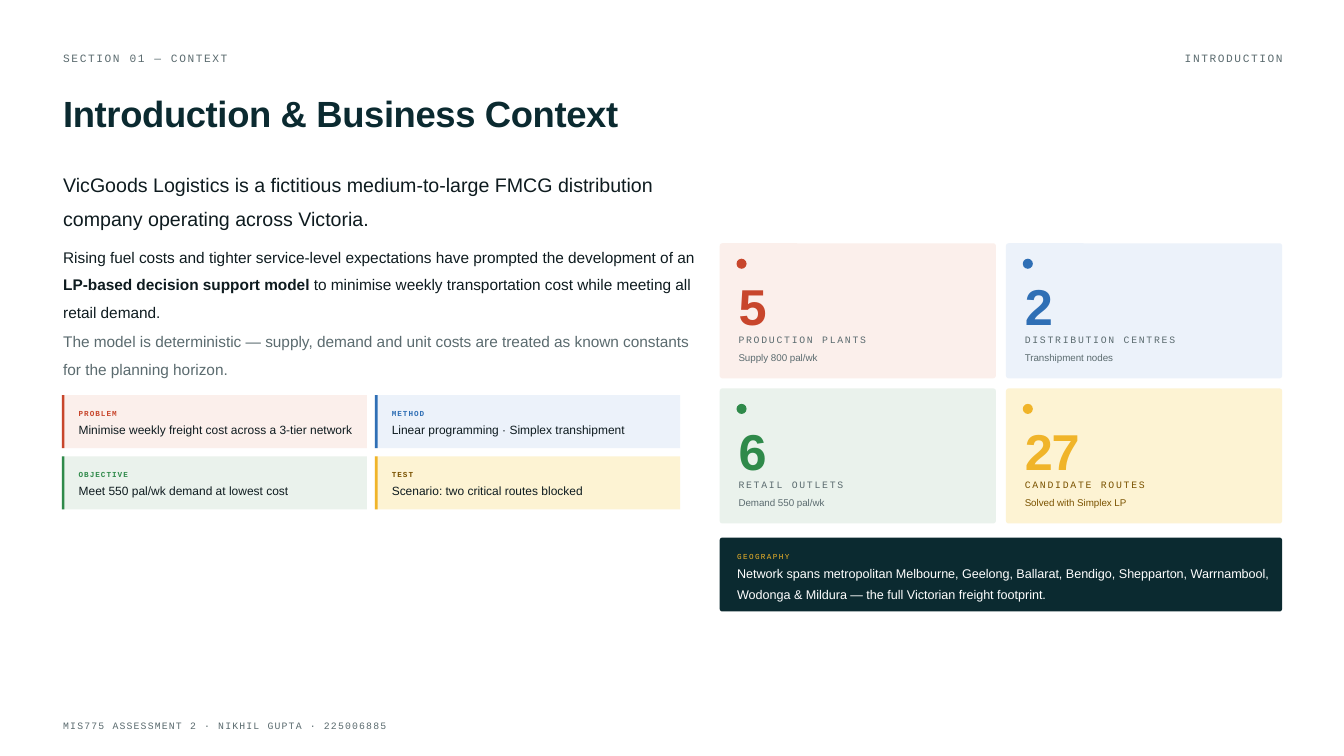
"""Build the introduction and business context slide."""
from dataclasses import dataclass
from typing import NamedTuple

from lxml import etree
from pptx import Presentation
from pptx import util as u
from pptx.dml.color import RGBColor
from pptx.enum import shapes, text
from pptx.oxml.ns import qn

SANS, MONO = "Arial", "Courier New"
WHITE = RGBColor(0xFF, 0xFF, 0xFF)
INK = RGBColor(0x0E, 0x1B, 0x1F)
NAVY = RGBColor(0x0B, 0x2A, 0x30)
GREY = RGBColor(0x5B, 0x6B, 0x6F)
RED = RGBColor(0xC8, 0x46, 0x2C)
BLUE = RGBColor(0x2F, 0x6F, 0xB5)
GREEN = RGBColor(0x2F, 0x8A, 0x4A)
AMBER = RGBColor(0xF0, 0xB4, 0x29)
BROWN = RGBColor(0x7A, 0x52, 0x00)
RED_TINT = RGBColor(0xFB, 0xEF, 0xEB)
BLUE_TINT = RGBColor(0xEC, 0xF2, 0xFA)
GREEN_TINT = RGBColor(0xEA, 0xF2, 0xEC)
AMBER_TINT = RGBColor(0xFD, 0xF3, 0xD3)

MARGIN = 0.94
RADIUS = 0.04


class Box(NamedTuple):
    """A rectangle in inches."""
    left: float
    top: float
    width: float
    height: float


@dataclass(frozen=True)
class Grid:
    """Equal cells separated by one gap."""
    left: float
    top: float
    width: float
    height: float
    gap: float

    def cell(self, index: int, columns: int = 2) -> Box:
        """Return the cell at a running index."""
        row, column = divmod(index, columns)
        return Box(self.left + column * (self.width + self.gap),
                   self.top + row * (self.height + self.gap), self.width, self.height)


@dataclass(frozen=True)
class Note:
    """A short labelled statement with a coloured edge."""
    label: str
    statement: str
    accent: RGBColor
    tint: RGBColor
    label_color: RGBColor


@dataclass(frozen=True)
class Card:
    """A key figure with its caption."""
    figure: str
    label: str
    detail: str
    accent: RGBColor
    tint: RGBColor
    label_color: RGBColor = GREY


NOTE_GRID = Grid(0.92, 5.88, 4.54, 0.79, 0.12)
CARD_GRID = Grid(10.71, 3.62, 4.11, 2.01, 0.15)

NOTES = (
    Note("PROBLEM", "Minimise weekly freight cost across a 3-tier network", RED, RED_TINT, RED),
    Note("METHOD", "Linear programming · Simplex transhipment", BLUE, BLUE_TINT, BLUE),
    Note("OBJECTIVE", "Meet 550 pal/wk demand at lowest cost", GREEN, GREEN_TINT, GREEN),
    Note("TEST", "Scenario: two critical routes blocked", AMBER, AMBER_TINT, BROWN),
)
CARDS = (
    Card("5", "PRODUCTION PLANTS", "Supply 800 pal/wk", RED, RED_TINT),
    Card("2", "DISTRIBUTION CENTRES", "Transhipment nodes", BLUE, BLUE_TINT),
    Card("6", "RETAIL OUTLETS", "Demand 550 pal/wk", GREEN, GREEN_TINT),
    Card("27", "CANDIDATE ROUTES", "Solved with Simplex LP", AMBER, AMBER_TINT, BROWN),
)


def write(paragraph, words: str, *, size: float, leading: float, color: RGBColor = INK,
          font: str = SANS, bold: bool = False, spacing: float = 0) -> None:
    """Append a formatted run to a paragraph."""
    paragraph.line_spacing = u.Pt(leading)
    paragraph.alignment = text.PP_ALIGN.LEFT
    run = paragraph.add_run()
    run.text = words
    run.font.name, run.font.size, run.font.bold = font, u.Pt(size), bold
    run.font.color.rgb = color
    if spacing:
        run.font._element.set("spc", str(round(spacing * 100)))


def prepare(shape, box: Box):
    """Place a text shape, clear its insets and return its text frame."""
    shape.left, shape.top, shape.width, shape.height = map(u.Inches, box)
    frame = shape.text_frame
    frame.margin_left = frame.margin_top = frame.margin_right = frame.margin_bottom = 0
    frame.vertical_anchor = text.MSO_ANCHOR.TOP
    frame.word_wrap = True
    frame.auto_size = text.MSO_AUTO_SIZE.NONE
    return frame


def add_text(slide, box: Box, words: str, **style) -> None:
    """Add a one-paragraph text box."""
    frame = prepare(slide.shapes.add_textbox(*map(u.Inches, box)), box)
    write(frame.paragraphs[0], words, **style)


def add_block(slide, kind: shapes.MSO_SHAPE, box: Box, color: RGBColor) -> None:
    """Add a filled preset shape without outline."""
    shape = slide.shapes.add_shape(kind, *map(u.Inches, box))
    shape.shadow.inherit = False
    shape.fill.solid()
    shape.fill.fore_color.rgb = color
    shape.line.fill.background()
    if kind == shapes.MSO_SHAPE.ROUNDED_RECTANGLE:
        shape.adjustments[0] = RADIUS / min(box.width, box.height)


def fill_body(placeholder) -> None:
    """Write the three introductory paragraphs."""
    frame = prepare(placeholder, Box(MARGIN, 2.41, 9.43, 3.2))
    lead, need, model = frame.paragraphs[0], frame.add_paragraph(), frame.add_paragraph()
    for paragraph, before in ((lead, 0), (need, 9), (model, 1.6)):
        properties = paragraph._p.get_or_add_pPr()
        properties.set("marL", "0")
        properties.set("indent", "0")
        etree.SubElement(properties, qn("a:buNone"))
        paragraph.space_before = u.Pt(before)
    write(lead, "VicGoods Logistics is a fictitious medium-to-large FMCG distribution "
          "company operating across Victoria.", size=21, leading=36.5)
    regular = dict(size=16.5, leading=29.7)
    write(need, "Rising fuel costs and tighter service-level expectations have prompted "
          "the development of an ", **regular)
    write(need, "LP-based decision support model ", bold=True, **regular)
    write(need, "to minimise weekly transportation cost while meeting all retail demand.", **regular)
    write(model, "The model is deterministic — supply, demand and unit costs are treated as "
          "known constants for the planning horizon.", color=GREY, **regular)


def draw_note(slide, note: Note, box: Box) -> None:
    """Draw one labelled statement."""
    add_block(slide, shapes.MSO_SHAPE.RECTANGLE, box, note.tint)
    add_block(slide, shapes.MSO_SHAPE.RECTANGLE, box._replace(width=0.04), note.accent)
    left, width = box.left + 0.25, 4.19
    add_text(slide, Box(left, box.top + 0.15, width, 0.2), note.label, size=8.2, leading=13.9,
             color=note.label_color, font=MONO, bold=True, spacing=1.1)
    add_text(slide, Box(left, box.top + 0.32, width, 0.32), note.statement, size=12.8, leading=21.4)


def draw_card(slide, card: Card, box: Box) -> None:
    """Draw one key figure card."""
    add_block(slide, shapes.MSO_SHAPE.ROUNDED_RECTANGLE, box, card.tint)
    add_block(slide, shapes.MSO_SHAPE.OVAL,
              Box(box.left + 0.25, box.top + 0.23, 0.15, 0.15), card.accent)
    left, width = box.left + 0.28, 3.67
    add_text(slide, Box(left, box.top + 0.47, width, 0.77), card.figure, size=54, leading=64.8,
             color=card.accent, bold=True, spacing=-1.1)
    caption = dict(size=10.5, leading=17.6, color=card.label_color)
    add_text(slide, Box(left, box.top + 1.27, width, 0.25), card.label,
             font=MONO, spacing=1.9, **caption)
    add_text(slide, Box(left, box.top + 1.54, width, 0.25), card.detail, **caption)


def draw_geography(slide) -> None:
    """Draw the dark geography panel."""
    panel = Box(CARD_GRID.left, 8, 2 * CARD_GRID.width + CARD_GRID.gap, 1.1)
    add_block(slide, shapes.MSO_SHAPE.ROUNDED_RECTANGLE, panel, NAVY)
    left, width = panel.left + 0.26, 8.1
    add_text(slide, Box(left, panel.top + 0.16, width, 0.2), "GEOGRAPHY", size=8.2,
             leading=13.9, color=AMBER, font=MONO, spacing=1.5)
    add_text(slide, Box(left, panel.top + 0.33, width, 0.59),
             "Network spans metropolitan Melbourne, Geelong, Ballarat, Bendigo, Shepparton, "
             "Warrnambool, Wodonga & Mildura — the full Victorian freight footprint.",
             size=13.5, leading=22.7, color=WHITE)


def main() -> None:
    """Build and save the presentation."""
    presentation = Presentation()
    presentation.slide_width, presentation.slide_height = u.Inches(20), u.Inches(11.25)
    slide = presentation.slides.add_slide(presentation.slide_layouts[1])
    title = prepare(slide.shapes.title, Box(MARGIN, 1.3, 18.66, 0.63))
    write(title.paragraphs[0], "Introduction & Business Context", size=39, leading=50.5,
          color=NAVY, bold=True, spacing=-0.4)
    fill_body(slide.placeholders[1])
    header = dict(size=12, leading=20.2, color=GREY, font=MONO, spacing=1.7)
    add_text(slide, Box(MARGIN, 0.69, 2.68, 0.3), "SECTION 01 — CONTEXT", **header)
    add_text(slide, Box(17.63, 0.69, 1.51, 0.3), "INTRODUCTION", **header)
    for index, note in enumerate(NOTES):
        draw_note(slide, note, NOTE_GRID.cell(index))
    for index, card in enumerate(CARDS):
        draw_card(slide, card, CARD_GRID.cell(index))
    draw_geography(slide)
    add_text(slide, Box(MARGIN, 10.64, 4.92, 0.25), "MIS775 ASSESSMENT 2 · NIKHIL GUPTA · 225006885",
             size=10.5, leading=17.6, color=GREY, font=MONO, spacing=1.3)
    presentation.save("out.pptx")


if __name__ == "__main__":
    main()
